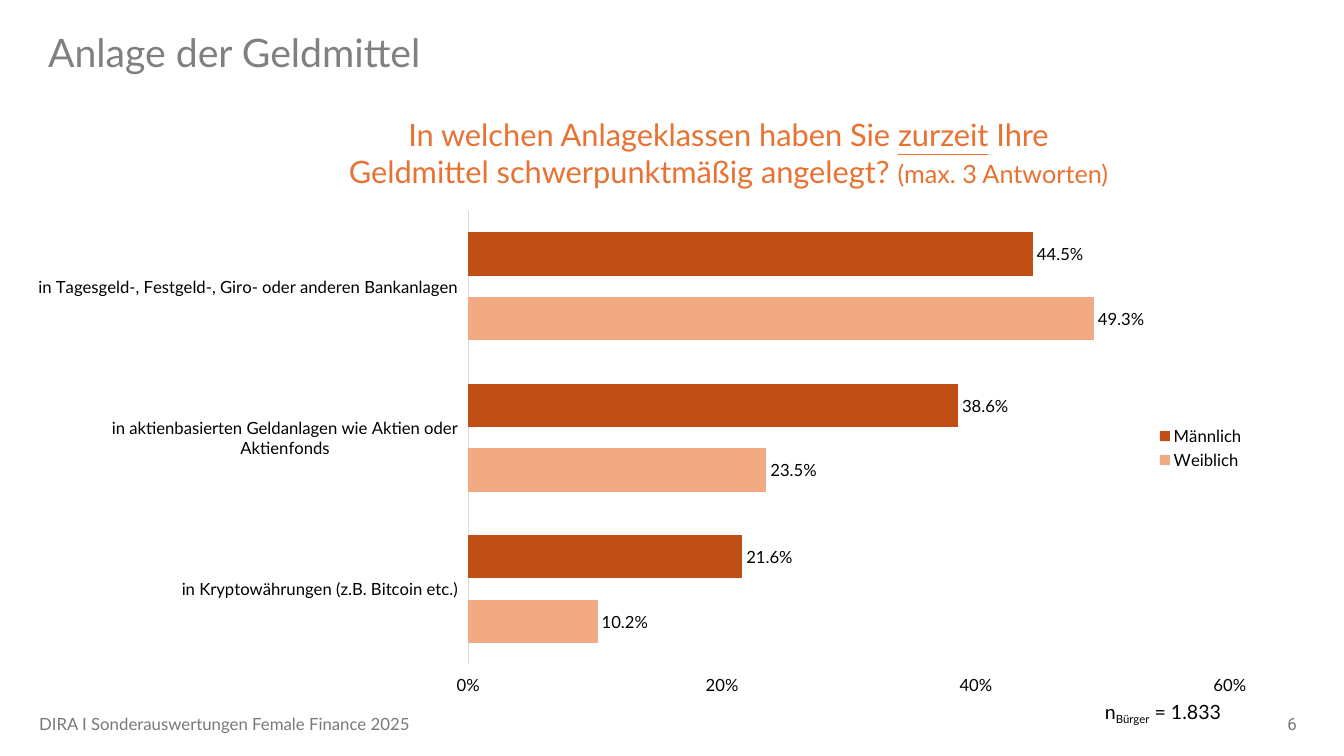
"""Build the slide on how men and women invest their money."""
from dataclasses import dataclass

from lxml.etree import SubElement
from pptx import Presentation
from pptx.chart.data import CategoryChartData as Data
from pptx.dml.color import RGBColor as Rgb
from pptx.enum.chart import XL_CHART_TYPE as Kind
from pptx.enum.chart import XL_LABEL_POSITION as Spot
from pptx.enum.chart import XL_LEGEND_POSITION as Side
from pptx.enum.chart import XL_TICK_LABEL_POSITION as Place
from pptx.enum.chart import XL_TICK_MARK as Tick
from pptx.enum.text import MSO_ANCHOR as Anchor
from pptx.enum.text import PP_ALIGN as Align
from pptx.oxml.ns import qn
from pptx.util import Inches, Pt


@dataclass(frozen=True)
class Theme:
    face: str = "Lato"
    digit: str = "Roboto"
    black: str = "000000"
    title: str = "808080"
    foot: str = "797979"
    accent: str = "E97132"
    male: str = "C04F15"
    female: str = "F2AA84"
    axis: str = "D9D9D9"
    head: int = 28
    ask: int = 22
    hint: int = 18
    note: int = 14
    small: int = 12


THEME = Theme()
CLASSES = (
    "in Kryptowährungen (z.B. Bitcoin etc.)",
    "in aktienbasierten Geldanlagen wie Aktien oder Aktienfonds",
    "in Tagesgeld-, Festgeld-, Giro- oder anderen Bankanlagen",
)
GROUPS = (
    ("Weiblich", (0.102, 0.235, 0.493), THEME.female),
    ("Männlich", (0.216, 0.386, 0.445), THEME.male),
)
PLOT = {"x": 0.349, "y": 0.043, "w": 0.63, "h": 0.874}


def assign(item, **values):
    """Set each named attribute on the item."""
    for name, value in values.items():
        setattr(item, name, value)


def style(font, size, color, face=THEME.face, **extra):
    """Give a font its size, colour and face."""
    assign(font, size=Pt(size), name=face, **extra)
    font.color.rgb = Rgb.from_string(color)


def add_text(slide, box, runs, size, color, face=THEME.face,
             align=Align.LEFT, anchor=Anchor.TOP, space=1.0):
    """Add a one-paragraph text box; each run is a text and its changes."""
    frame = slide.shapes.add_textbox(*map(Inches, box)).text_frame
    assign(frame, word_wrap=True, vertical_anchor=anchor)
    para = frame.paragraphs[0]
    assign(para, alignment=align, line_spacing=space)
    for text, change in runs:
        run = para.add_run()
        run.text = text
        look = {"size": size, "color": color, "face": face, **change}
        base = look.pop("base", None)
        style(run.font, **look)
        if base:
            run.font._element.set("baseline", str(base))


def place_plot(chart):
    """Fix the inner plot area as shares of the chart."""
    area = chart._chartSpace.chart.plotArea
    for old in area.findall(qn("c:layout")):
        area.remove(old)
    layout = SubElement(area, qn("c:layout"))
    area.insert(0, layout)
    manual = SubElement(layout, qn("c:manualLayout"))
    parts = {"layoutTarget": "inner", "xMode": "edge", "yMode": "edge", **PLOT}
    for tag, value in parts.items():
        SubElement(manual, qn(f"c:{tag}")).set("val", str(value))


def style_axes(chart):
    """Format the category and value axes."""
    cat, val = chart.category_axis, chart.value_axis
    for axis in (cat, val):
        axis.has_major_gridlines = False
        style(axis.tick_labels.font, THEME.small, THEME.black)
    assign(cat, major_tick_mark=Tick.NONE, tick_label_position=Place.LOW)
    cat.format.line.width = Pt(0.75)
    cat.format.line.color.rgb = Rgb.from_string(THEME.axis)
    assign(val, minimum_scale=0, maximum_scale=0.6, major_unit=0.2,
           major_tick_mark=Tick.OUTSIDE)
    assign(val.tick_labels, number_format="0%", number_format_is_linked=False)
    val.format.line.fill.background()


def add_bars(slide, box):
    """Add the clustered bar chart with its labels and legend."""
    data = Data(number_format="0.0%")
    data.categories = CLASSES
    for name, shares, _ in GROUPS:
        data.add_series(name, shares)
    frame = slide.shapes.add_chart(Kind.BAR_CLUSTERED, *map(Inches, box), data)
    chart = frame.chart
    assign(chart, has_title=False, has_legend=True)
    style(chart.font, THEME.small, THEME.black)
    assign(chart.legend, position=Side.RIGHT, include_in_layout=False)
    style(chart.legend.font, THEME.small, THEME.black)
    plot = chart.plots[0]
    assign(plot, gap_width=100, overlap=-50, vary_by_categories=False)
    for series, (_, _, color) in zip(plot.series, GROUPS):
        series.format.fill.solid()
        series.format.fill.fore_color.rgb = Rgb.from_string(color)
        labels = series.data_labels
        assign(labels, show_value=True, position=Spot.OUTSIDE_END,
               number_format="0.0%", number_format_is_linked=False)
        style(labels.font, THEME.small, THEME.black)
    style_axes(chart)
    place_plot(chart)


def main():
    """Build and save the slide."""
    deck = Presentation()
    assign(deck, slide_width=Inches(13.33), slide_height=Inches(7.5))
    slide = deck.slides.add_slide(deck.slide_layouts[6])
    add_bars(slide, (0.38, 1.87, 12.07, 5.15))
    add_text(slide, (3.23, 1.1, 7.99, 0.84), (
        ("In welchen Anlageklassen haben Sie ", {}),
        ("zurzeit", {"underline": True}),
        (" Ihre Geldmittel schwerpunktmäßig angelegt? ", {}),
        ("(max. 3 Antworten)", {"size": THEME.hint}),
    ), THEME.ask, THEME.accent, align=Align.CENTER)
    add_text(slide, (10.86, 6.89, 1.79, 0.34), (
        ("n", {}), ("Bürger", {"base": -25000}), (" = 1.833", {}),
    ), THEME.note, THEME.black)
    add_text(slide, (0.38, 0.28, 11, 0.53), (("Anlage der Geldmittel", {}),),
             THEME.head, THEME.title, space=0.9)
    add_text(slide, (9.96, 6.98, 3, 0.4), (("6", {}),), THEME.small,
             THEME.foot, THEME.digit, Align.RIGHT, Anchor.MIDDLE)
    add_text(slide, (0.29, 6.98, 6.7, 0.4),
             (("DIRA I Sonderauswertungen Female Finance 2025", {}),),
             THEME.small, THEME.foot, anchor=Anchor.MIDDLE)
    deck.save("out.pptx")


if __name__ == "__main__":
    main()
